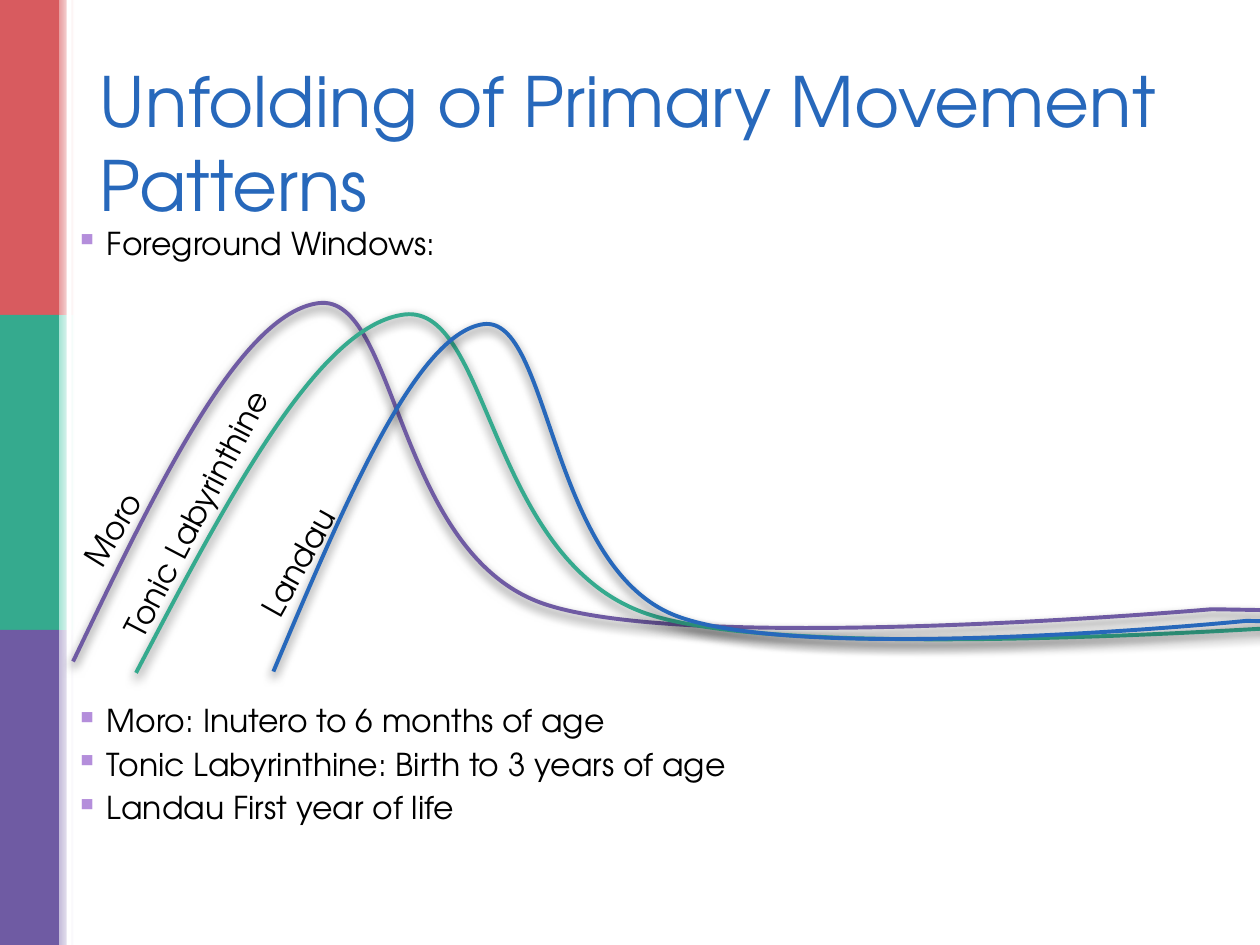
import dataclasses

import lxml.etree
import pptx
import pptx.dml.color
import pptx.enum.shapes
import pptx.enum.text
import pptx.oxml
import pptx.oxml.ns
import pptx.util

Inches, Pt = pptx.util.Inches, pptx.util.Pt
FIT = pptx.enum.text.MSO_AUTO_SIZE
qn = pptx.oxml.ns.qn


@dataclasses.dataclass(frozen=True)
class Theme:
    font: str = "TeX Gyre Adventor"
    symbol: str = "OpenSymbol"
    red: str = "D85B5F"
    green: str = "35AA8E"
    purple: str = "6F5BA3"
    blue: str = "2768BB"
    pink: str = "E89D9F"
    mint: str = "A7E4D5"
    lilac: str = "C5BDDA"
    bullet: str = "B48EDB"
    white: str = "FFFFFF"
    black: str = "000000"
    head: float = 39.6
    text: float = 18


# The shared wave, as fractions of its width and height: a start, three
# Bezier bends of three control points each, and a straight tail.
START = (0, 1)
BENDS = [
    (0.068, 0.526), (0.136, 0.053), (0.2, 0.026),
    (0.264, 0), (0.262, 0.704), (0.383, 0.843),
    (0.504, 0.982), (0.927, 0.858), (0.927, 0.858),
]
TAIL = [(0.997, 0.862), (1, 0.853)]


def color(code):
    return pptx.dml.color.RGBColor.from_string(code)


def write(para, text, font, size, ink, before=0, spacing=1.0):
    para.alignment = pptx.enum.text.PP_ALIGN.LEFT
    para.space_before = Pt(before)
    para.line_spacing = spacing
    run = para.add_run()
    run.text = text
    run.font.name = font
    run.font.size = Pt(size)
    run.font.color.rgb = color(ink)


def bend(shape):
    """Turn each three line segments of the bends into one Bezier curve."""
    lines = list(shape._element.iter(qn("a:lnTo")))[:len(BENDS)]
    for first in range(0, len(lines), 3):
        group = lines[first:first + 3]
        curve = lxml.etree.Element(qn("a:cubicBezTo"))
        group[0].addprevious(curve)
        for line in group:
            curve.append(line[0])
            line.getparent().remove(line)


class Page:
    def __init__(self, deck, theme):
        self.theme = theme
        self.slide = deck.slides.add_slide(deck.slide_layouts[5])
        self.shapes = self.slide.shapes

    def bar(self, x, y, w, h, fill, fade=None):
        kind = pptx.enum.shapes.MSO_SHAPE.RECTANGLE
        bar = self.shapes.add_shape(
            kind, Inches(x), Inches(y), Inches(w), Inches(h))
        bar.shadow.inherit = False
        bar.line.fill.background()
        if fade:
            bar.fill.gradient()
            bar.fill.gradient_angle = 0
            for stop, code in zip(bar.fill.gradient_stops, (fill, fade)):
                stop.color.rgb = color(code)
        else:
            bar.fill.solid()
            bar.fill.fore_color.rgb = color(fill)

    def title(self, text, x, y, w, h):
        title = self.shapes.title
        title.left, title.top = Inches(x), Inches(y)
        title.width, title.height = Inches(w), Inches(h)
        frame = title.text_frame
        frame.auto_size = FIT.NONE
        frame.vertical_anchor = pptx.enum.text.MSO_ANCHOR.MIDDLE
        write(frame.paragraphs[0], text, font=self.theme.font,
              size=self.theme.head, ink=self.theme.blue)

    def box(self, x, y, w, h):
        box = self.shapes.add_textbox(
            Inches(x), Inches(y), Inches(w), Inches(h))
        box.text_frame.word_wrap = True
        return box

    def list(self, items, x, y, w, h):
        """Add bulleted items, given as (text, points of space before)."""
        frame = self.box(x, y, w, h).text_frame
        for index, (text, before) in enumerate(items):
            para = frame.add_paragraph() if index else frame.paragraphs[0]
            props = para._p.get_or_add_pPr()
            props.set("marL", str(Inches(0.25)))
            props.set("indent", str(-Inches(0.25)))
            tint = lxml.etree.SubElement(props, qn("a:buClr"))
            lxml.etree.SubElement(
                tint, qn("a:srgbClr"), val=self.theme.bullet)
            lxml.etree.SubElement(
                props, qn("a:buFont"), typeface=self.theme.symbol)
            lxml.etree.SubElement(props, qn("a:buChar"), char="▪")
            write(para, text, font=self.theme.font, size=self.theme.text,
                  ink=self.theme.black, before=before, spacing=0.9)

    def label(self, text, x, y, w, turn):
        box = self.box(x, y, w, 0.4)
        box.rotation = turn
        box.text_frame.auto_size = FIT.SHAPE_TO_FIT_TEXT
        write(box.text_frame.paragraphs[0], text, font=self.theme.font,
              size=self.theme.text, ink=self.theme.black)

    def wave(self, x, y, w, h, ink):
        start, *rest = [(Inches(x + w * a), Inches(y + h * b))
                        for a, b in [START, *BENDS, *TAIL]]
        pen = self.shapes.build_freeform(*start)
        pen.add_line_segments(rest, close=False)
        wave = pen.convert_to_shape()
        bend(wave)
        wave.fill.background()
        wave.line.color.rgb = color(ink)
        wave.line.width = Pt(2.25)
        self.shade(wave)

    def shade(self, shape):
        """Give the shape a soft shadow that falls straight down."""
        shape.shadow.inherit = False
        effects = shape._element.spPr.find(qn("a:effectLst"))
        shadow = lxml.etree.SubElement(
            effects, qn("a:outerShdw"), blurRad=str(Pt(6)),
            dist=str(Pt(3)), dir="5400000", rotWithShape="0")
        tint = lxml.etree.SubElement(
            shadow, qn("a:srgbClr"), val=self.theme.black)
        lxml.etree.SubElement(tint, qn("a:alpha"), val="60000")


def main():
    deck = pptx.Presentation()
    deck.slide_width, deck.slide_height = Inches(10), Inches(7.5)
    theme = Theme()
    page = Page(deck, theme)

    bands = [(theme.red, theme.pink), (theme.green, theme.mint),
             (theme.purple, theme.lilac)]
    for row, (fill, pale) in enumerate(bands):
        page.bar(0, 2.5 * row, 0.47, 2.5, fill)
        page.bar(0.47, 2.5 * row, 0.12, 2.5, pale, fade=theme.white)
    page.bar(0.53, 0, 0.04, 7.5, theme.white)

    page.title("Unfolding of Primary Movement Patterns",
               0.69, 0.4, 8.73, 1.45)
    gap = 5.4
    page.list([
        ("Foreground Windows:", 0),
        ("Moro: Inutero to 6 months of age", 253.5),
        ("Tonic Labyrinthine: Birth to 3 years of age", gap),
        ("Landau First year of life", gap),
    ], 0.5, 1.76, 9, 5.25)

    page.wave(0.58, 2.33, 9.75, 2.92, theme.purple)
    page.wave(1.08, 2.42, 10.67, 2.92, theme.green)
    page.wave(2.17, 2.5, 8.33, 2.83, theme.blue)

    page.label("Moro", 0.32, 3.71, 1.5, 301.7)
    page.label("Tonic Labyrinthine", 0.22, 3.61, 2.94, 297.6)
    page.label("Landau", 1.64, 3.99, 1.75, 299.2)

    deck.save("out.pptx")


if __name__ == "__main__":
    main()
